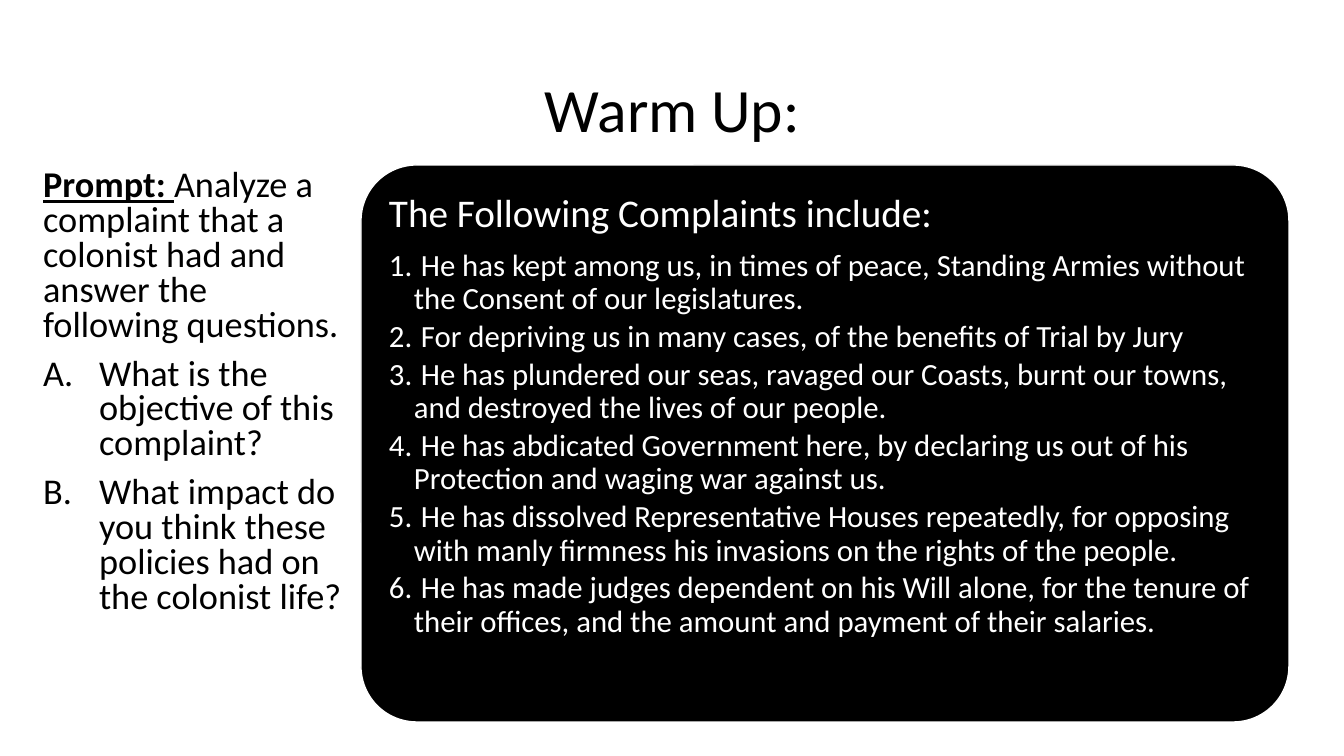
from lxml.etree import SubElement
from pptx import Presentation
from pptx.dml.color import RGBColor
from pptx.enum.shapes import MSO_SHAPE
from pptx.enum.text import MSO_ANCHOR, MSO_AUTO_SIZE, PP_ALIGN
from pptx.oxml.ns import qn
from pptx.util import Emu, Pt

HEADING = "Warm Up:"
PROMPT = ("Prompt: ", "Analyze a complaint that a colonist had and answer the following questions.")
QUESTIONS = [
    "What is the objective of this complaint?",
    "What impact do you think these policies had on the colonist life?",
]
COMPLAINTS_HEADING = "The Following Complaints include:"
COMPLAINTS = [
    " He has kept among us, in times of peace, Standing Armies without the Consent of our legislatures.",
    " For depriving us in many cases, of the benefits of Trial by Jury",
    " He has plundered our seas, ravaged our Coasts, burnt our towns, and destroyed the lives of our people.",
    " He has abdicated Government here, by declaring us out of his Protection and waging war against us.",
    " He has dissolved Representative Houses repeatedly, for opposing with manly firmness his invasions "
    "on the rights of the people.",
    " He has made judges dependent on his Will alone, for the tenure of their offices, and the amount and "
    "payment of their salaries.",
]

BLACK = RGBColor(0, 0, 0)
WHITE = RGBColor(255, 255, 255)
FONT = "Calibri"
SLIDE_SIZE = (1344, 756)
HEADING_BOX = (93, 40, 1159, 146)
PROMPT_BOX = (33, 165, 328, 480)
PANEL_BOX = (361, 165, 928, 557)
PANEL_PADDING = (16, 17)
PANEL_INSET = 12
QUESTION_INDENT = 56
COMPLAINT_INDENT = 25


def px(length):
    """Convert pixels to EMU."""
    return Emu(round(length * 914400 / 100.8))


def place(part, box):
    """Move and size a part."""
    part.left, part.top, part.width, part.height = map(px, box)


def next_paragraph(frame):
    """Return the first paragraph while it is empty, else a new one."""
    first = frame.paragraphs[0]
    return frame.add_paragraph() if first.runs else first


def write(frame, texts, size, color, spacing, before=0, after=0, indent=0, numbering=None):
    """Add one paragraph made of the given runs."""
    paragraph = next_paragraph(frame)
    for text in texts:
        paragraph.add_run().text = text
    paragraph.line_spacing = spacing
    paragraph.space_before = Pt(before)
    paragraph.space_after = Pt(after)
    properties = paragraph._p.get_or_add_pPr()
    properties.set("marL", str(px(indent)))
    properties.set("indent", str(px(-indent)))
    if numbering:
        SubElement(properties, qn("a:buFont"), typeface="+mj-lt")
        SubElement(properties, qn("a:buAutoNum"), type=numbering)
    else:
        SubElement(properties, qn("a:buNone"))
    paragraph.font.name = FONT
    paragraph.font.size = Pt(size)
    paragraph.font.color.rgb = color
    return paragraph


def prepare(frame, anchor):
    """Set wrapping, fit and anchor of a text frame."""
    frame.word_wrap = True
    frame.auto_size = MSO_AUTO_SIZE.NONE
    frame.vertical_anchor = anchor


def add_prompt(slide):
    """Fill the title and the prompt with its questions."""
    heading, prompt = slide.placeholders
    place(heading, HEADING_BOX)
    prepare(heading.text_frame, MSO_ANCHOR.MIDDLE)
    write(heading.text_frame, [HEADING], 44, BLACK, 0.9).alignment = PP_ALIGN.CENTER

    place(prompt, PROMPT_BOX)
    prepare(prompt.text_frame, MSO_ANCHOR.TOP)
    label = write(prompt.text_frame, PROMPT, 25.9, BLACK, 0.8, before=10).runs[0]
    label.font.bold = True
    label.font.underline = True
    for question in QUESTIONS:
        write(prompt.text_frame, [question], 25.9, BLACK, 0.8, before=10,
              indent=QUESTION_INDENT, numbering="alphaUcPeriod")


def add_complaints(slide):
    """Draw the panel and its numbered complaints."""
    panel = slide.shapes.add_shape(MSO_SHAPE.ROUNDED_RECTANGLE, *map(px, PANEL_BOX))
    panel.adjustments[0] = 0.1
    panel.shadow.inherit = False
    panel.fill.solid()
    panel.fill.fore_color.rgb = BLACK
    panel.line.color.rgb = WHITE
    panel.line.width = Pt(1)

    left, top, width, height = PANEL_BOX
    across, down = PANEL_PADDING
    inner = (left + across, top + down, width - 2 * across, height - 2 * down)
    frame = slide.shapes.add_textbox(*map(px, inner)).text_frame
    prepare(frame, MSO_ANCHOR.TOP)
    frame.margin_left = frame.margin_right = px(PANEL_INSET)
    frame.margin_top = frame.margin_bottom = px(PANEL_INSET)
    write(frame, [COMPLAINTS_HEADING], 28, WHITE, 0.9, after=9.8)
    for complaint in COMPLAINTS:
        write(frame, [complaint], 22, WHITE, 0.9, after=3.3,
              indent=COMPLAINT_INDENT, numbering="arabicPeriod").level = 1


def main():
    """Build and save the warm-up slide."""
    deck = Presentation()
    deck.slide_width, deck.slide_height = map(px, SLIDE_SIZE)
    slide = deck.slides.add_slide(deck.slide_layouts[1])
    add_prompt(slide)
    add_complaints(slide)
    deck.save("out.pptx")


if __name__ == "__main__":
    main()
